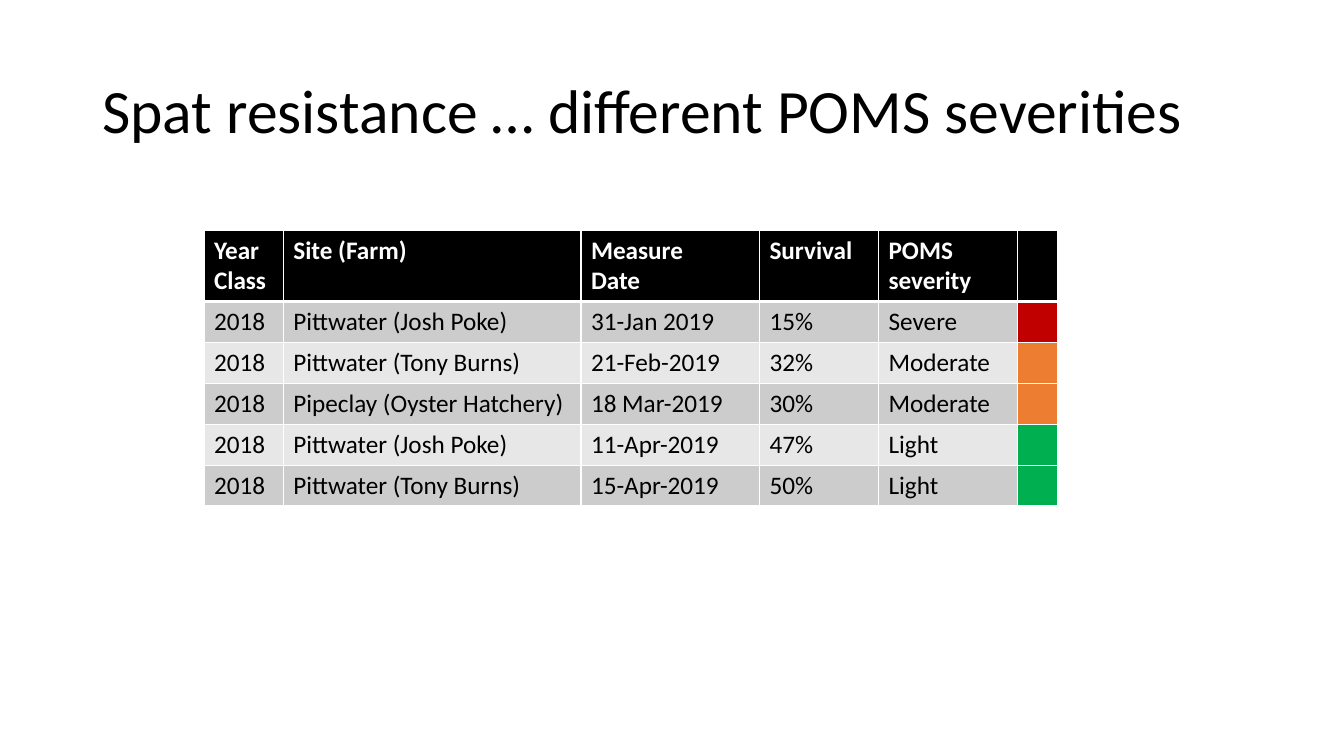
from lxml import etree
from pptx import Presentation
from pptx.dml.color import RGBColor
from pptx.enum.text import MSO_ANCHOR
from pptx.oxml.ns import qn
from pptx.util import Cm, Pt

MIDDLE = MSO_ANCHOR.MIDDLE
TOP = MSO_ANCHOR.TOP
BLACK = RGBColor(0x00, 0x00, 0x00)
WHITE = RGBColor(0xFF, 0xFF, 0xFF)
DARK_BAND = RGBColor(0xCC, 0xCC, 0xCC)
LIGHT_BAND = RGBColor(0xE7, 0xE7, 0xE7)
SEVERITY_COLORS = {
    "Severe": RGBColor(0xC0, 0x00, 0x00),
    "Moderate": RGBColor(0xED, 0x7D, 0x31),
    "Light": RGBColor(0x00, 0xB0, 0x50),
}
FONT = "Calibri"
THIN, THICK = Pt(1), Pt(3)

COLUMN_WIDTHS = (2, 7.5, 4.5, 3, 3.5, 1)
HEADER_HEIGHT, ROW_HEIGHT = 1.8, 1.03
HEADERS = ("Year\vClass", "Site (Farm)", "Measure\vDate", "Survival", "POMS\vseverity")
TRIALS = (
    ("2018", "Pittwater (Josh Poke)", "31-Jan 2019", "15%", "Severe"),
    ("2018", "Pittwater (Tony Burns)", "21-Feb-2019", "32%", "Moderate"),
    ("2018", "Pipeclay (Oyster Hatchery)", "18 Mar-2019", "30%", "Moderate"),
    ("2018", "Pittwater (Josh Poke)", "11-Apr-2019", "47%", "Light"),
    ("2018", "Pittwater (Tony Burns)", "15-Apr-2019", "50%", "Light"),
)


def write_text(text_frame, text, size=18, color=BLACK, bold=False, anchor=TOP, spacing=1.0):
    """Write one formatted paragraph into a text frame."""
    text_frame.word_wrap = True
    text_frame.vertical_anchor = anchor
    paragraph = text_frame.paragraphs[0]
    paragraph.text = text
    paragraph.line_spacing = spacing
    for run in paragraph.runs:
        run.font.name = FONT
        run.font.size = Pt(size)
        run.font.bold = bold
        run.font.color.rgb = color


def set_borders(cell, top, bottom):
    """Give a cell white borders with the given top and bottom widths."""
    properties = cell._tc.get_or_add_tcPr()
    for side, width in (("lnL", THIN), ("lnR", THIN), ("lnT", top), ("lnB", bottom)):
        line = etree.SubElement(properties, qn(f"a:{side}"), w=str(width))
        fill = etree.SubElement(line, qn("a:solidFill"))
        etree.SubElement(fill, qn("a:srgbClr"), val=str(WHITE))


def fill_cell(cell, color):
    """Fill a cell with a solid color."""
    cell.fill.solid()
    cell.fill.fore_color.rgb = color


def add_title(slide, left, top, width, height):
    """Place the slide title in the given box."""
    title = slide.shapes.add_textbox(left, top, width, height)
    write_text(title.text_frame, "Spat resistance … different POMS severities",
               size=44, anchor=MIDDLE, spacing=0.9)


def add_survival_table(slide, left, top):
    """Place the survival table with its severity color column."""
    height = HEADER_HEIGHT + ROW_HEIGHT * len(TRIALS)
    table = slide.shapes.add_table(
        len(TRIALS) + 1, len(COLUMN_WIDTHS), left, top, Cm(sum(COLUMN_WIDTHS)), Cm(height)
    ).table
    for column, width in zip(table.columns, COLUMN_WIDTHS):
        column.width = Cm(width)
    for index, values in enumerate((HEADERS, *TRIALS)):
        is_header = index == 0
        row = table.rows[index]
        row.height = Cm(HEADER_HEIGHT if is_header else ROW_HEIGHT)
        band = BLACK if is_header else DARK_BAND if index % 2 else LIGHT_BAND
        for cell in row.cells:
            set_borders(cell, THICK if index == 1 else THIN, THICK if is_header else THIN)
            fill_cell(cell, band)
        for cell, value in zip(row.cells, values):
            write_text(cell.text_frame, value, color=WHITE if is_header else BLACK, bold=is_header)
        if not is_header:
            fill_cell(table.cell(index, len(values)), SEVERITY_COLORS[values[-1]])


def main():
    """Build and save the presentation."""
    presentation = Presentation()
    presentation.slide_width = Cm(33.87)
    presentation.slide_height = Cm(19.05)
    slide = presentation.slides.add_slide(presentation.slide_layouts[6])
    add_title(slide, Cm(2.33), Cm(1.01), Cm(29.21), Cm(3.68))
    add_survival_table(slide, Cm(5.14), Cm(5.8))
    presentation.save("out.pptx")


if __name__ == "__main__":
    main()
